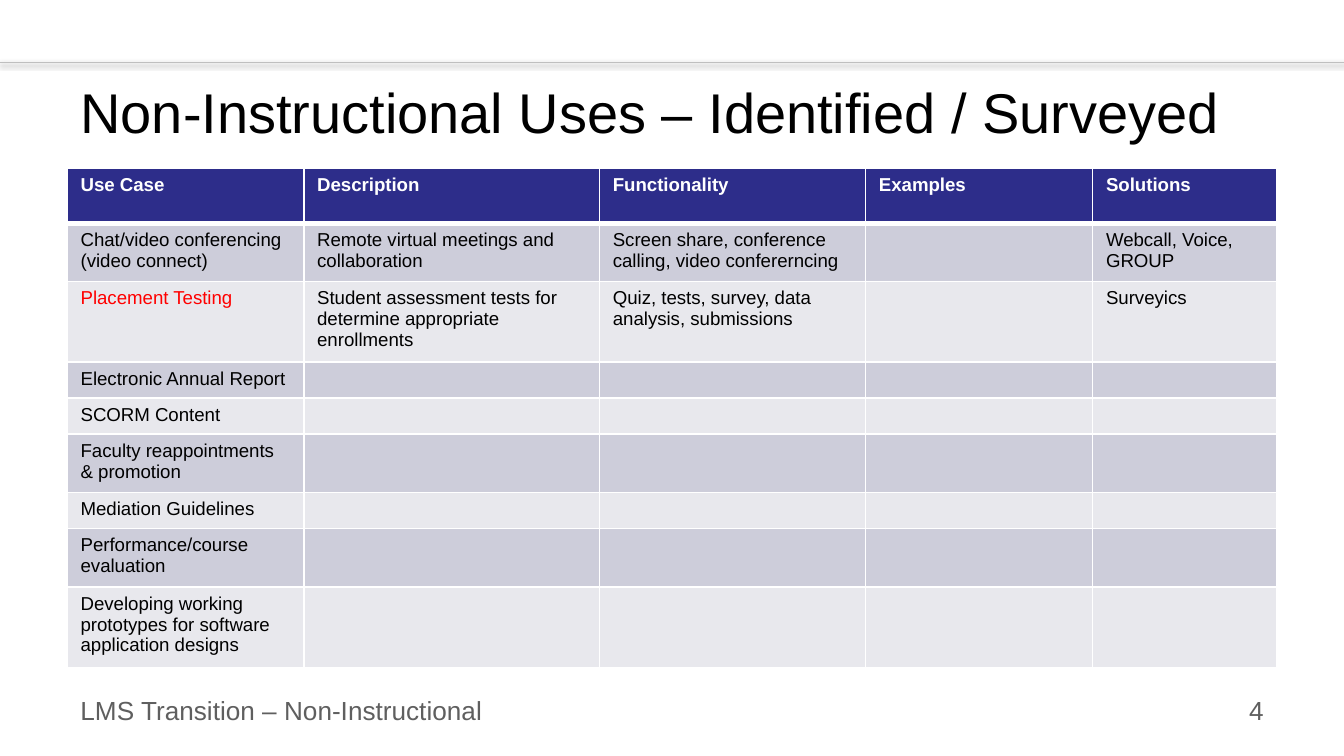
from dataclasses import dataclass

from lxml.etree import SubElement
from pptx import Presentation
from pptx.dml.color import RGBColor
from pptx.enum.shapes import MSO_CONNECTOR as CONN
from pptx.enum.text import MSO_ANCHOR as ANCHOR, PP_ALIGN as ALIGN
from pptx.oxml import parse_xml
from pptx.oxml.ns import nsdecls, qn
from pptx.util import Inches, Pt


@dataclass(frozen=True)
class Theme:
    font: str = "Arial"
    black: str = "000000"
    white: str = "FFFFFF"
    grey: str = "5F5F5F"
    rule: str = "BFBFBF"
    red: str = "FF0000"
    header: str = "2D2D8A"
    bands: tuple = ("CDCDDA", "E8E8ED")
    title_size: int = 30
    footer_size: int = 14
    cell_size: int = 10


TITLE = "Non-Instructional Uses – Identified / Surveyed"
COL_WIDTHS = (1.76, 2.2, 1.98, 1.69, 1.37)
HEADINGS = ("Use Case", "Description", "Functionality", "Examples", "Solutions")
ROWS = (
    ("Chat/video conferencing (video connect)", "Remote virtual meetings and collaboration",
     "Screen share, conference calling, video confererncing", "", "Webcall, Voice, GROUP"),
    ("Placement Testing", "Student assessment tests for determine appropriate enrollments",
     "Quiz, tests, survey, data analysis, submissions", "", "Surveyics"),
    ("Electronic Annual Report",),
    ("SCORM Content",),
    ("Faculty reappointments & promotion",),
    ("Mediation Guidelines",),
    ("Performance/course evaluation",),
    ("Developing working prototypes for software application designs",),
)


def write(tf, text, *, font, size, color, bold=False, align=ALIGN.LEFT):
    p = tf.paragraphs[0]
    p.alignment = align
    if not text:
        # An empty cell takes its line height from the end mark
        SubElement(p._p, qn("a:endParaRPr"), sz=str(size * 100))
        return
    r = p.add_run()
    r.text = text
    r.font.name = font
    r.font.size = Pt(size)
    r.font.bold = bold
    r.font.color.rgb = RGBColor.from_string(color)


def set_borders(cell, color, bottom=1):
    tc_pr = cell._tc.get_or_add_tcPr()
    for side, width in (("L", 1), ("R", 1), ("T", 1), ("B", bottom)):
        ln = SubElement(tc_pr, qn(f"a:ln{side}"), w=str(Pt(width)))
        SubElement(SubElement(ln, qn("a:solidFill")), qn("a:srgbClr"), val=color)


class SlideBuilder:
    def __init__(self, slide, theme):
        self.s = slide
        self.theme = theme

    def text(self, text, left, top, width, height, *, anchor=ANCHOR.TOP, **fmt):
        box = self.s.shapes.add_textbox(*map(Inches, (left, top, width, height)))
        tf = box.text_frame
        tf.word_wrap = True
        tf.vertical_anchor = anchor
        write(tf, text, font=self.theme.font, **fmt)

    def shadowed_rule(self, y, width):
        line = self.s.shapes.add_connector(
            CONN.STRAIGHT, 0, Inches(y), Inches(width), Inches(y))
        line.line.color.rgb = RGBColor.from_string(self.theme.rule)
        line.line.width = Pt(0.25)
        line._element.spPr.append(parse_xml(
            f'<a:effectLst {nsdecls("a")}>'
            f'<a:outerShdw blurRad="{Pt(3.1)}" dist="{Pt(1.6)}" dir="5400000" rotWithShape="0">'
            f'<a:srgbClr val="{self.theme.black}"><a:alpha val="38000"/></a:srgbClr>'
            '</a:outerShdw></a:effectLst>'))

    def cell(self, cell, text, fill, color, *, bold=False, bottom=1):
        set_borders(cell, self.theme.white, bottom)
        cell.fill.solid()
        cell.fill.fore_color.rgb = RGBColor.from_string(fill)
        write(cell.text_frame, text, font=self.theme.font,
              size=self.theme.cell_size, color=color, bold=bold)

    def use_case_table(self, left, top, height, header_height):
        """Body rows have no height of their own, so they fit their text."""
        t = self.theme
        frame = self.s.shapes.add_table(
            len(ROWS) + 1, len(COL_WIDTHS), Inches(left), Inches(top),
            Inches(sum(COL_WIDTHS)), Inches(height))
        table = frame.table
        for col, width in zip(table.columns, COL_WIDTHS):
            col.width = Inches(width)
        for i, row in enumerate(table.rows):
            row.height = Inches(0 if i else header_height)
        frame.height = Inches(height)
        for c, heading in enumerate(HEADINGS):
            self.cell(table.cell(0, c), heading, t.header, t.white, bold=True, bottom=3)
        for i, texts in enumerate(ROWS):
            padding = ("",) * (len(HEADINGS) - len(texts))
            for c, text in enumerate(texts + padding):
                color = t.red if text == "Placement Testing" else t.black
                self.cell(table.cell(i + 1, c), text, t.bands[i % 2], color)


def main():
    prs = Presentation()
    prs.slide_width = Inches(10)
    prs.slide_height = prs.slide_width * 9 // 16
    theme = Theme()
    b = SlideBuilder(prs.slides.add_slide(prs.slide_layouts[6]), theme)
    footer = {"size": theme.footer_size, "color": theme.grey}

    b.text("LMS Transition – Non-Instructional", 0.5, 5.12, 3.19, 0.34, **footer)
    b.shadowed_rule(0.46, 10)
    b.text(TITLE, 0.5, 0.5, 9, 0.66, anchor=ANCHOR.MIDDLE,
           size=theme.title_size, color=theme.black)
    b.use_case_table(0.5, 1.25, 3.71, 0.41)
    b.text("4", 7.17, 5.12, 2.33, 0.39, align=ALIGN.RIGHT, **footer)
    prs.save("out.pptx")


if __name__ == "__main__":
    main()
